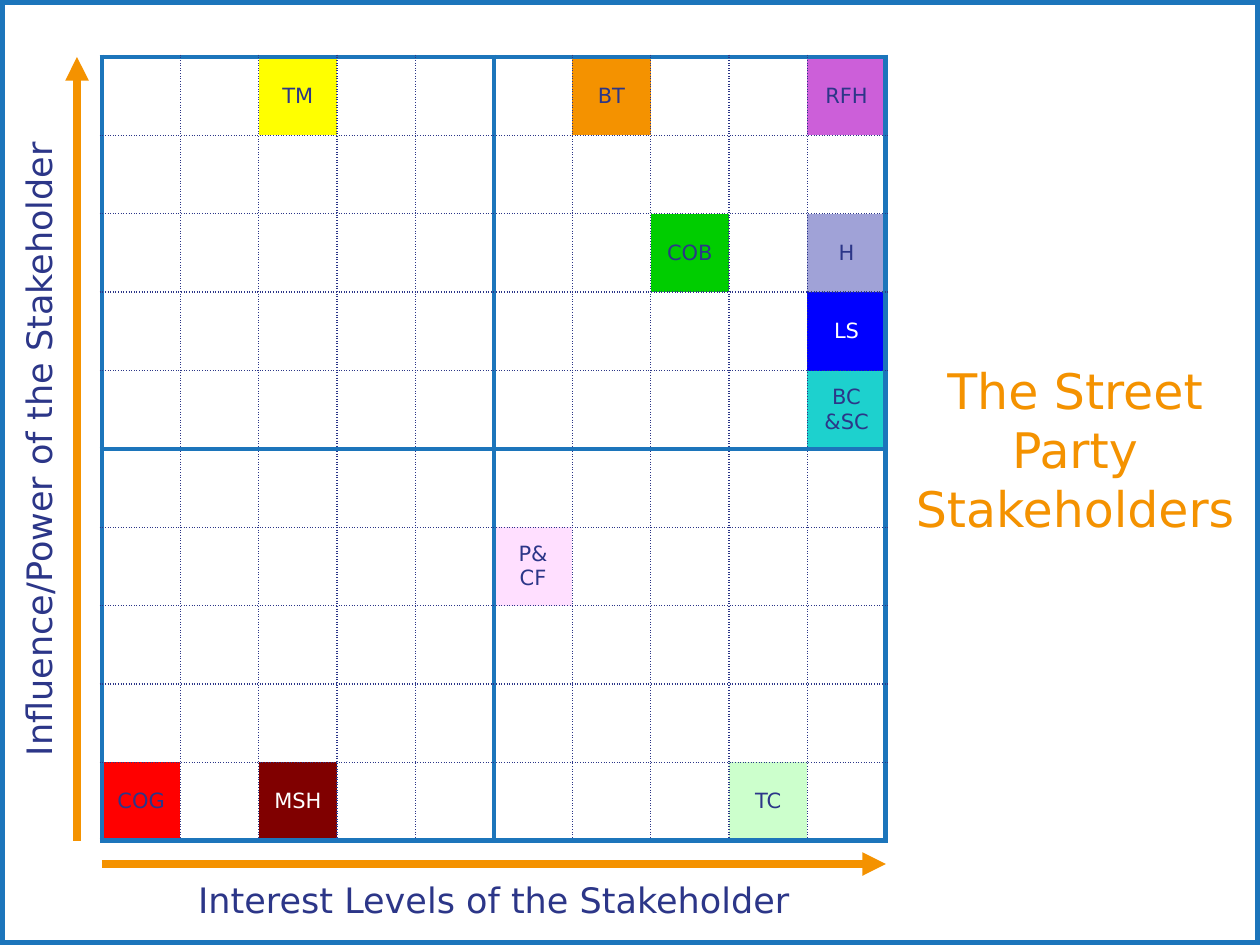
from dataclasses import dataclass

from lxml.etree import SubElement
from pptx import Presentation
from pptx.dml.color import RGBColor
from pptx.enum.shapes import MSO_CONNECTOR, MSO_SHAPE
from pptx.enum.text import MSO_ANCHOR as Anchor, PP_ALIGN as Align
from pptx.oxml.ns import qn
from pptx.util import Pt

EMU_PER_PX = 914400 / 126


@dataclass(frozen=True)
class Theme:
    font: str = "DejaVu Sans"
    ink: str = "2C3688"
    frame: str = "1C75BB"
    accent: str = "F49200"
    paper: str = "FFFFFF"
    title_size: int = 28
    axis_size: int = 20
    cell_size: int = 12
    frame_width: float = 6
    arrow_width: float = 4.5
    quadrant_width: float = 3
    grid_width: float = 1


THEME = Theme()
STEPS = 10
QUADRANT = 5

# (row, column): label, fill, text colour
STAKEHOLDERS = {
    (0, 2): ("TM", "FFFF00", THEME.ink),
    (0, 6): ("BT", "F49200", THEME.ink),
    (0, 9): ("RFH", "CC5FD9", THEME.ink),
    (2, 7): ("COB", "00CD00", THEME.ink),
    (2, 9): ("H", "A0A2D7", THEME.ink),
    (3, 9): ("LS", "0000FF", THEME.paper),
    (4, 9): ("BC\n&SC", "1DD1CE", THEME.ink),
    (6, 5): ("P&\nCF", "FFDFFF", THEME.ink),
    (9, 0): ("COG", "FF0000", THEME.ink),
    (9, 2): ("MSH", "800000", THEME.paper),
    (9, 8): ("TC", "CCFFCC", THEME.ink),
}


def px(*lengths):
    """Turn whole pixels into EMU, as a list."""
    return [round(length * EMU_PER_PX) for length in lengths]


def rgb(colour):
    return RGBColor.from_string(colour)


def format_text(frame, size, colour):
    for para in frame.paragraphs:
        para.alignment = Align.CENTER
        for span in para.runs:
            span.font.name = THEME.font
            span.font.size = Pt(size)
            span.font.color.rgb = rgb(colour)


def add_page_frame(page, width, height):
    frame = page.shapes.add_shape(MSO_SHAPE.RECTANGLE, *px(0, 0, width, height))
    frame.shadow.inherit = False
    frame.fill.solid()
    frame.fill.fore_color.rgb = rgb(THEME.paper)
    frame.line.color.rgb = rgb(THEME.frame)
    frame.line.width = Pt(THEME.frame_width)
    page.shapes.title.element.addprevious(frame.element)


def place_title(page, left, top, width, height):
    title = page.shapes.title
    title.left, title.top, title.width, title.height = px(left, top, width, height)
    title.text_frame.text = "The Street Party Stakeholders"
    title.text_frame.vertical_anchor = Anchor.MIDDLE
    format_text(title.text_frame, THEME.title_size, THEME.accent)


def set_borders(cell, row, column):
    """Draw solid lines around each quadrant and dotted lines elsewhere."""
    heavy_sides = {
        "lnL": column % QUADRANT == 0,
        "lnR": (column + 1) % QUADRANT == 0,
        "lnT": row % QUADRANT == 0,
        "lnB": (row + 1) % QUADRANT == 0,
    }
    properties = cell._tc.get_or_add_tcPr()
    for position, (side, heavy) in enumerate(heavy_sides.items()):
        width = THEME.quadrant_width if heavy else THEME.grid_width
        line = SubElement(properties, qn(f"a:{side}"), w=str(Pt(width)))
        fill = SubElement(line, qn("a:solidFill"))
        SubElement(fill, qn("a:srgbClr"), val=THEME.frame if heavy else THEME.ink)
        SubElement(line, qn("a:prstDash"), val="solid" if heavy else "sysDot")
        properties.insert(position, line)


def fill_cell(cell, label, fill, colour):
    cell.fill.solid()
    cell.fill.fore_color.rgb = rgb(fill)
    cell.vertical_anchor = Anchor.MIDDLE
    cell.margin_left, cell.margin_right = px(14, 14)
    cell.margin_top, cell.margin_bottom = px(6, 6)
    cell.text_frame.text = label
    format_text(cell.text_frame, THEME.cell_size, colour)


def add_matrix(page, left, top, side):
    box = page.shapes.add_table(STEPS, STEPS, *px(left, top, side, side))
    table = box.table
    table.first_row = table.horz_banding = False
    for row in range(STEPS):
        for column in range(STEPS):
            cell = table.cell(row, column)
            if (row, column) in STAKEHOLDERS:
                fill_cell(cell, *STAKEHOLDERS[row, column])
            else:
                cell.fill.background()
            set_borders(cell, row, column)


def add_axis(page, text, start, end, label_box, rotation=0):
    """Group an arrow with its label; label_box is given before rotation."""
    axis = page.shapes.add_group_shape()
    arrow = axis.shapes.add_connector(MSO_CONNECTOR.STRAIGHT, *px(*start, *end))
    arrow.line.color.rgb = rgb(THEME.accent)
    arrow.line.width = Pt(THEME.arrow_width)
    SubElement(arrow.line._get_or_add_ln(), qn("a:tailEnd"), type="triangle")
    SubElement(arrow.element.spPr, qn("a:effectLst"))

    label = axis.shapes.add_textbox(*px(*label_box))
    label.rotation = rotation
    label.text_frame.word_wrap = True
    label.text_frame.vertical_anchor = Anchor.MIDDLE
    label.text_frame.text = text
    format_text(label.text_frame, THEME.axis_size, THEME.ink)


def add_axes(page, left, top, side):
    """Place both axes along the matrix that fills the given square."""
    bottom, label_height = top + side, 56
    arrow_y, arrow_x = bottom + 23, left - 25
    add_axis(page, "Interest Levels of the Stakeholder",
             (left, arrow_y), (left + side, arrow_y),
             (left, bottom + 30, side, label_height))
    label_centre = left - 64
    add_axis(page, "Influence/Power of the Stakeholder",
             (arrow_x, bottom), (arrow_x, top),
             (label_centre - side // 2, top + (side - label_height) // 2,
              side, label_height), rotation=270)


def main():
    deck = Presentation()
    deck.slide_width, deck.slide_height = px(1260, 945)
    page = deck.slides.add_slide(deck.slide_layouts[5])
    matrix_box = (102, 57, 784)
    add_page_frame(page, 1260, 945)
    place_title(page, 901, 84, 348, 730)
    add_matrix(page, *matrix_box)
    add_axes(page, *matrix_box)
    deck.save("out.pptx")


if __name__ == "__main__":
    main()
